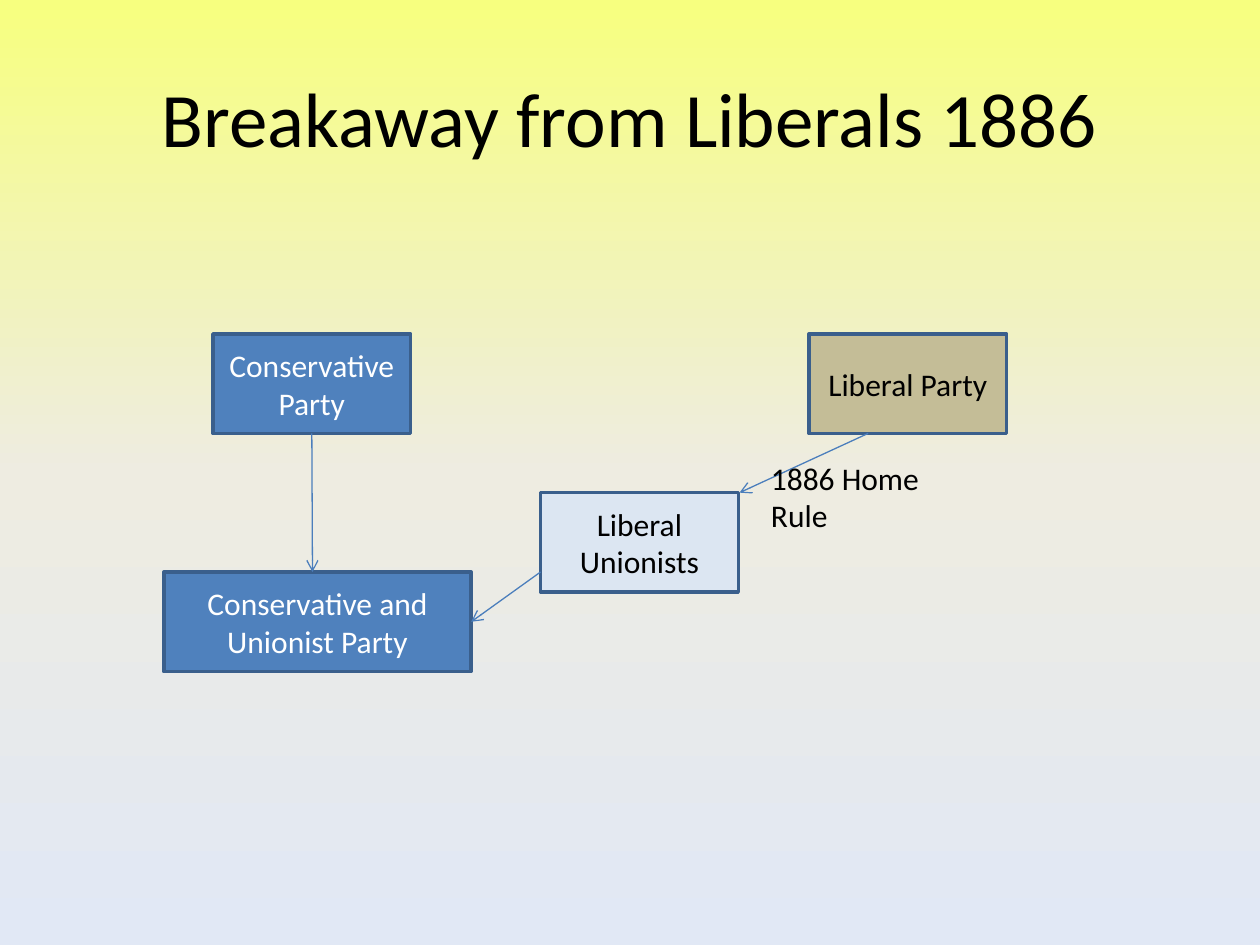
"""Build a slide showing how the Liberal Unionists left the Liberal Party."""

from copy import deepcopy
from dataclasses import dataclass
from typing import Any, Optional

from pptx import Presentation
from pptx.dml.color import RGBColor
from pptx.enum.shapes import MSO_CONNECTOR as Connector, MSO_SHAPE as Shape
from pptx.enum.text import MSO_ANCHOR as Anchor, PP_ALIGN as Align
from pptx.oxml.ns import qn
from pptx.oxml.xmlchemy import OxmlElement
from pptx.util import Inches, Pt

BOTTOM, RIGHT = 2, 3


@dataclass(frozen=True)
class Theme:
    font: str = "Calibri"
    title_size: int = 44
    body_size: int = 18
    black: str = "000000"
    white: str = "FFFFFF"
    blue: str = "4F81BD"
    tan: str = "C4BD97"
    pale_blue: str = "DCE6F2"
    outline: str = "3A5F8C"
    arrow: str = "4B7EBC"
    background: tuple = ((0, "F7FF7F"), (0.5, "EEECE1"), (1, "E1E8F5"))


THEME = Theme()


@dataclass(frozen=True)
class Party:
    name: str
    left: float
    top: float
    fill: str
    text_color: str
    width: float = 1.57
    height: float = 0.79


@dataclass(frozen=True)
class Arrow:
    start: tuple[float, float]
    end: tuple[float, float]
    source: Optional[str] = None
    target: Optional[str] = None


PARTIES = (
    Party("Conservative Party", 1.69, 2.65, THEME.blue, THEME.white),
    Party("Liberal Party", 6.42, 2.65, THEME.tan, THEME.black),
    Party("Conservative and Unionist Party", 1.3, 4.54, THEME.blue, THEME.white, width=2.44),
    Party("Liberal Unionists", 4.29, 3.91, THEME.pale_blue, THEME.black),
)
ARROWS = (
    Arrow((6.89, 3.44), (5.87, 3.91)),
    Arrow((4.29, 4.54), (3.74, 4.93), target="Conservative and Unionist Party"),
    Arrow((2.48, 3.44), (2.48, 4.54), source="Conservative Party"),
)


def apply_format(item: Any, values: dict[str, Any]) -> None:
    """Set each named attribute of the item."""
    for name, value in values.items():
        setattr(item, name, value)


def write_text(shape: Any, text: str, size: int, color: str, align: Align, anchor: Anchor) -> None:
    """Fill a shape with one formatted paragraph."""
    frame = shape.text_frame
    apply_format(frame, {"text": text, "word_wrap": True, "vertical_anchor": anchor})
    paragraph = frame.paragraphs[0]
    paragraph.alignment = align
    font = paragraph.runs[0].font
    apply_format(font, {"name": THEME.font, "size": Pt(size)})
    font.color.rgb = RGBColor.from_string(color)


def paint_background(slide: Any) -> None:
    """Give the slide its vertical three-colour gradient."""
    fill = slide.background.fill
    fill.gradient()
    fill.gradient_angle = 270
    stop_list = slide.element.find(f".//{qn('a:gsLst')}")
    stop_list.append(deepcopy(stop_list[-1]))
    for stop, (position, color) in zip(fill.gradient_stops, THEME.background):
        stop.color.rgb = RGBColor.from_string(color)
        stop.position = position


def add_title(slide: Any, text: str) -> None:
    """Place and format the title placeholder."""
    title = slide.shapes.title
    apply_format(title, {"left": Inches(0.5), "top": Inches(0.3),
                         "width": Inches(9), "height": Inches(1.25)})
    write_text(title, text, THEME.title_size, THEME.black, Align.CENTER, Anchor.MIDDLE)


def add_party(slide: Any, party: Party) -> Any:
    """Draw one party box and return it."""
    shape = slide.shapes.add_shape(Shape.RECTANGLE, Inches(party.left), Inches(party.top),
                                   Inches(party.width), Inches(party.height))
    shape.shadow.inherit = False
    shape.fill.solid()
    shape.fill.fore_color.rgb = RGBColor.from_string(party.fill)
    shape.line.color.rgb = RGBColor.from_string(THEME.outline)
    shape.line.width = Pt(2)
    write_text(shape, party.name, THEME.body_size, party.text_color, Align.CENTER, Anchor.MIDDLE)
    return shape


def add_arrow(slide: Any, arrow: Arrow, boxes: dict[str, Any]) -> None:
    """Draw one arrow and join it to the boxes it names."""
    points = (Inches(value) for value in arrow.start + arrow.end)
    connector = slide.shapes.add_connector(Connector.STRAIGHT, *points)
    if arrow.source:
        connector.begin_connect(boxes[arrow.source], BOTTOM)
    if arrow.target:
        connector.end_connect(boxes[arrow.target], RIGHT)
    connector.line.color.rgb = RGBColor.from_string(THEME.arrow)
    connector.line.width = Pt(0.75)
    head = OxmlElement("a:tailEnd")
    head.set("type", "arrow")
    connector.line._get_or_add_ln().append(head)
    connector._element.spPr.append(OxmlElement("a:effectLst"))


def add_label(slide: Any, text: str) -> None:
    """Write the reason for the split beside its arrow."""
    label = slide.shapes.add_textbox(Inches(6.02), Inches(3.59), Inches(1.65), Inches(0.71))
    write_text(label, text, THEME.body_size, THEME.black, Align.LEFT, Anchor.TOP)


def main() -> None:
    """Create and save the presentation."""
    presentation = Presentation()
    apply_format(presentation, {"slide_width": Inches(10), "slide_height": Inches(7.5)})
    slide = presentation.slides.add_slide(presentation.slide_layouts[5])
    paint_background(slide)
    add_title(slide, "Breakaway from Liberals 1886")
    boxes = {party.name: add_party(slide, party) for party in PARTIES}
    for arrow in ARROWS:
        add_arrow(slide, arrow, boxes)
    add_label(slide, "1886 Home Rule")
    presentation.save("out.pptx")


if __name__ == "__main__":
    main()
